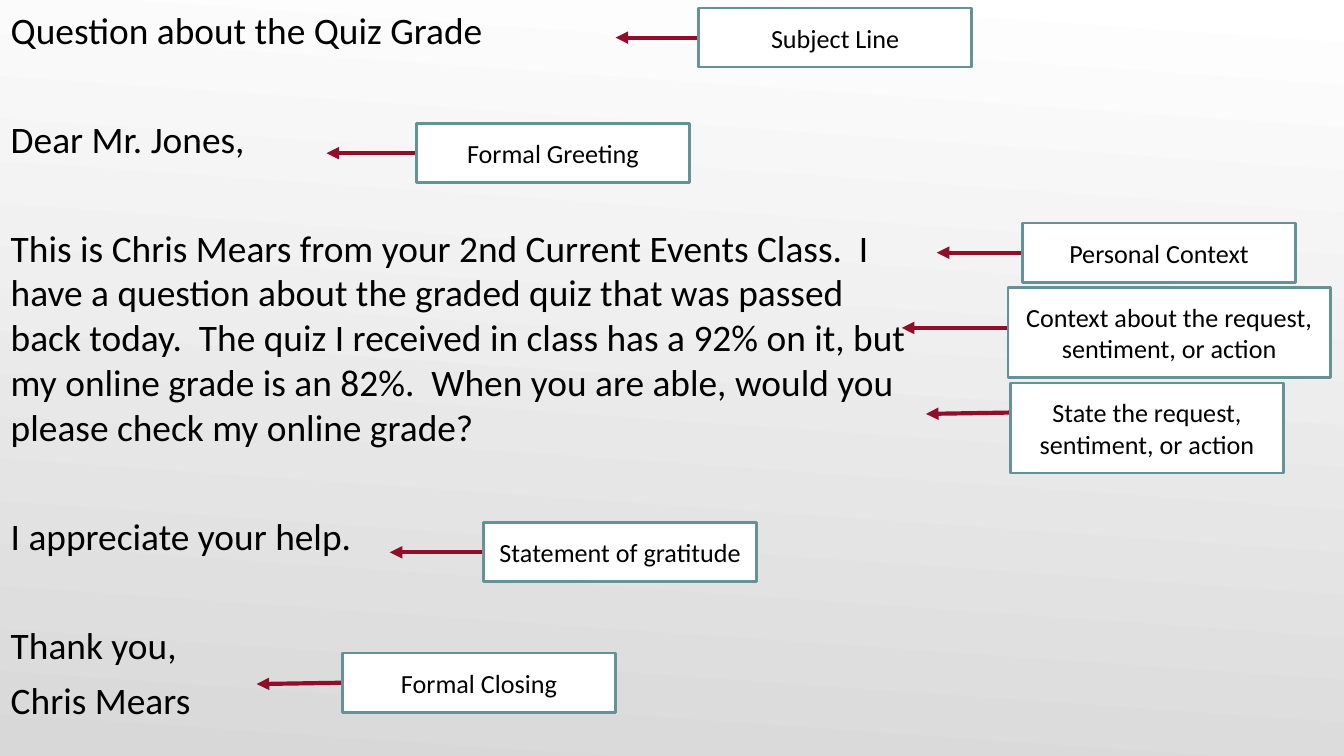
from dataclasses import dataclass

from pptx import Presentation
from pptx.dml.color import RGBColor as RGB
from pptx.enum.shapes import MSO_CONNECTOR as Connector, MSO_SHAPE as Shape
from pptx.enum.text import MSO_ANCHOR as Anchor, MSO_AUTO_SIZE as AutoSize, PP_ALIGN as Align
from pptx.oxml.ns import qn
from pptx.slide import Slide
from pptx.util import Inches, Pt
from lxml.etree import SubElement


@dataclass(frozen=True)
class Theme:
    font: str = "Calibri"
    text: RGB = RGB(0, 0, 0)
    box: RGB = RGB(0xFF, 0xFF, 0xFF)
    border: RGB = RGB(0x65, 0x92, 0x98)
    arrow: RGB = RGB(0x91, 0x0D, 0x28)
    background: tuple = (RGB(0xFF, 0xFF, 0xFF), RGB(0xD8, 0xD8, 0xD8))
    letter_size: float = 20
    label_size: float = 14
    border_width: float = 1.5
    arrow_width: float = 2.25
    line_gap: float = 5.2
    block_gap: float = 34.4


@dataclass(frozen=True)
class Callout:
    """A label box with an arrow to its left, measured in grid units."""
    label: str
    left: float
    top: float
    arrow: float
    width: float = 20.3
    height: float = 4.4
    arrow_drop: float = 2.2
    arrow_slope: float = 0


@dataclass(frozen=True)
class Line:
    text: str
    starts_block: bool = True


THEME = Theme()
WIDTH = Inches(10)
HEIGHT = WIDTH * 9 // 16
COLUMNS, ROWS = 100, 56.25

LETTER = [
    Line("Question about the Quiz Grade"),
    Line("Dear Mr. Jones,"),
    Line("This is Chris Mears from your 2nd Current Events Class.  I have a question "
         "about the graded quiz that was passed back today.  The quiz I received in "
         "class has a 92% on it, but my online grade is an 82%.  When you are able, "
         "would you please check my online grade?"),
    Line("I appreciate your help."),
    Line("Thank you,"),
    Line("Chris Mears", starts_block=False),
]

CALLOUTS = [
    Callout("Formal Greeting", 31, 9.2, 6.7),
    Callout("Personal Context", 76.1, 16.6, 6.4),
    Callout("Context about the request, sentiment, or action", 75, 21.4, 7.9,
            width=24, height=6.7, arrow_drop=3),
    Callout("State the request, sentiment, or action", 75.2, 28.5, 6.3,
            height=6.7, arrow_slope=0.1),
    Callout("Statement of gratitude", 36, 38.9, 7),
    Callout("Subject Line", 52, 0.6, 6.2),
    Callout("Formal Closing", 25.5, 48.6, 6.4, arrow_slope=0.1),
]


def x(columns: float) -> int:
    return round(WIDTH * columns / COLUMNS)


def y(rows: float) -> int:
    return round(HEIGHT * rows / ROWS)


def style_runs(p, size: float) -> None:
    for r in p.runs:
        r.font.name = THEME.font
        r.font.size = Pt(size)
        r.font.color.rgb = THEME.text


def paint_background(s: Slide) -> None:
    fill = s.background.fill
    fill.gradient()
    fill.gradient_angle = 360 - 94
    for stop, color in zip(fill.gradient_stops, THEME.background):
        stop.color.rgb = color


def write_letter(s: Slide) -> None:
    body = s.placeholders[1]
    body.left, body.top, body.width, body.height = x(-0.2), 0, x(69), HEIGHT
    tf = body.text_frame
    tf.word_wrap = True
    tf.auto_size = AutoSize.NONE
    tf.vertical_anchor = Anchor.TOP
    tf.text = "\n".join(line.text for line in LETTER)
    for i, (p, line) in enumerate(zip(tf.paragraphs, LETTER)):
        pPr = p._p.get_or_add_pPr()
        pPr.set("marL", "0")
        pPr.set("indent", "0")
        SubElement(pPr, qn("a:buNone"))
        gap = THEME.block_gap if line.starts_block else THEME.line_gap
        p.space_before = Pt(gap if i else 0)
        style_runs(p, THEME.letter_size)


def draw_arrow(shapes, c: Callout) -> None:
    start = c.top + c.arrow_drop
    arrow = shapes.add_connector(Connector.STRAIGHT, x(c.left), y(start),
                                 x(c.left - c.arrow), y(start + c.arrow_slope))
    arrow.line.color.rgb = THEME.arrow
    arrow.line.width = Pt(THEME.arrow_width)
    SubElement(arrow.line._get_or_add_ln(), qn("a:tailEnd"), type="triangle")
    SubElement(arrow._element.spPr, qn("a:effectLst"))


def draw_box(shapes, c: Callout) -> None:
    sp = shapes.add_shape(Shape.RECTANGLE, x(c.left), y(c.top), x(c.width), y(c.height))
    sp.shadow.inherit = False
    sp.fill.solid()
    sp.fill.fore_color.rgb = THEME.box
    sp.line.color.rgb = THEME.border
    sp.line.width = Pt(THEME.border_width)
    tf = sp.text_frame
    tf.word_wrap = True
    tf.auto_size = AutoSize.SHAPE_TO_FIT_TEXT
    tf.vertical_anchor = Anchor.MIDDLE
    tf.margin_left = tf.margin_right = tf.margin_top = tf.margin_bottom = Inches(0.1)
    tf.text = c.label
    p = tf.paragraphs[0]
    p.alignment = Align.CENTER
    style_runs(p, THEME.label_size)


def draw_callout(s: Slide, c: Callout) -> None:
    group = s.shapes.add_group_shape()
    draw_arrow(group.shapes, c)
    draw_box(group.shapes, c)


def main() -> None:
    prs = Presentation()
    prs.slide_width, prs.slide_height = WIDTH, HEIGHT
    s = prs.slides.add_slide(prs.slide_layouts[1])
    title = s.shapes.title._element
    title.getparent().remove(title)
    paint_background(s)
    write_letter(s)
    for callout in CALLOUTS:
        draw_callout(s, callout)
    prs.save("out.pptx")


if __name__ == "__main__":
    main()
